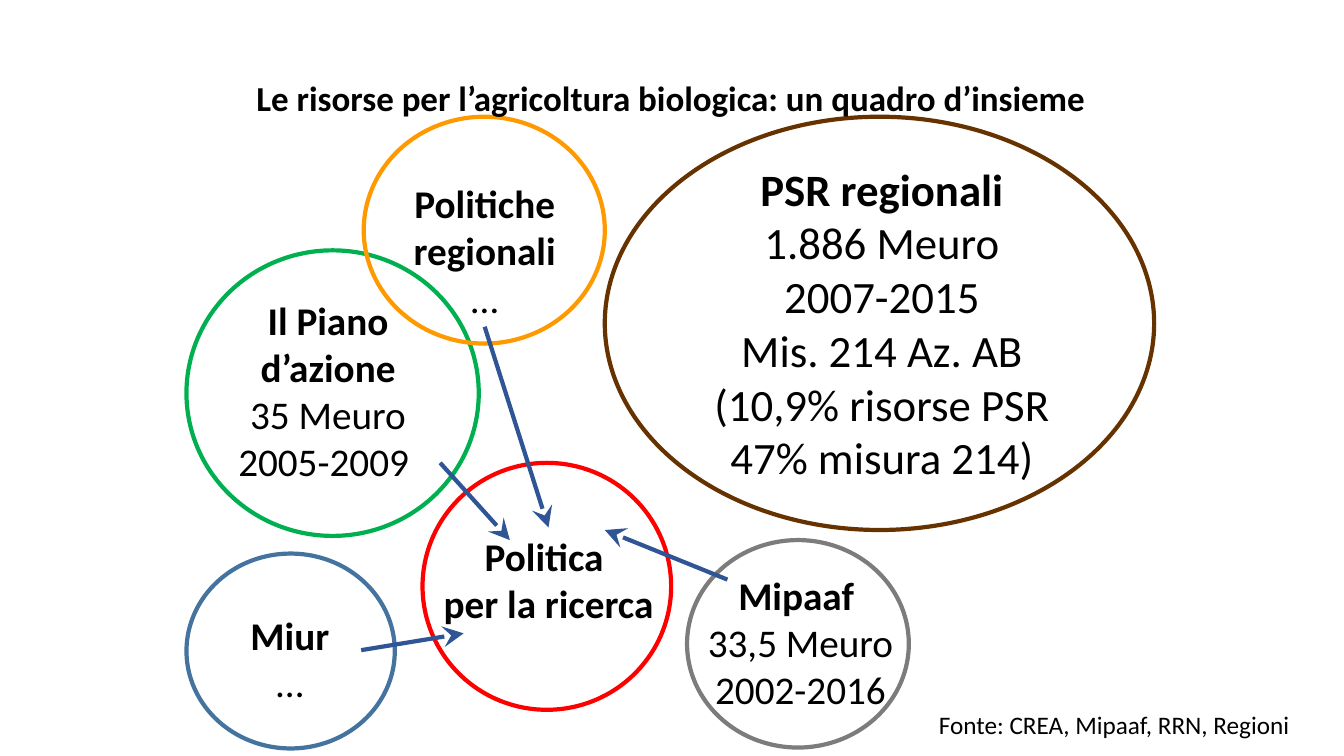
"""Build a slide on the funding of organic farming: circles, labels and arrows."""
from dataclasses import dataclass
from typing import Optional

from lxml import etree
from pptx import Presentation, util as u
from pptx.dml.color import RGBColor
from pptx.enum import shapes, text
from pptx.oxml.ns import qn

COLUMNS, ROWS = 160, 90


@dataclass(frozen=True)
class Theme:
    font: str = "Calibri"
    ink: str = "000000"
    arrow: str = "2F5597"
    green: str = "00B050"
    red: str = "FF0000"
    brown: str = "663300"
    orange: str = "FF9900"
    blue: str = "43739E"
    grey: str = "7C7C7C"
    title: int = 25
    large: int = 32
    body: int = 28
    source: int = 18
    stroke: int = 3


@dataclass(frozen=True)
class Box:
    column: float
    row: float
    width: float
    height: float


@dataclass(frozen=True)
class Circle:
    box: Box
    color: str


@dataclass(frozen=True)
class Label:
    name: str
    box: Box
    lines: tuple[str, ...]
    bold_lines: int = 1
    size: int = Theme.body
    centred: bool = True


@dataclass(frozen=True)
class Arrow:
    start: tuple[float, float]
    end: tuple[float, float]
    source: Optional[str] = None
    target: Optional[str] = None


THEME = Theme()

CIRCLES = (
    Circle(Box(22.2, 29.8, 34.8, 34), THEME.green),
    Circle(Box(50.3, 55.1, 29.6, 29.4), THEME.red),
    Circle(Box(72, 13.9, 65.4, 49.2), THEME.brown),
    Circle(Box(43.3, 13.9, 28.7, 27), THEME.orange),
    Circle(Box(22.2, 65.9, 24.8, 23.2), THEME.blue),
    Circle(Box(81.8, 64.3, 26.4, 24.7), THEME.grey),
)

LABELS = (
    Label("title", Box(27.7, 8.5, 104.3, 6.2),
          ("Le risorse per l’agricoltura biologica: un quadro d’insieme",), size=THEME.title),
    Label("plan", Box(24.7, 34.7, 28.7, 23.9),
          ("Il Piano d’azione", "35 Meuro", "2005-2009 ")),
    Label("rural", Box(81.5, 18.6, 47, 40),
          ("PSR regionali", "1.886 Meuro", "2007-2015", "Mis. 214 Az. AB",
           "(10,9% risorse PSR", "47% misura 214)"), size=THEME.large),
    Label("research", Box(48.2, 62.8, 34.2, 12.5),
          ("Politica ", "per la ricerca"), bold_lines=2),
    Label("regional", Box(41.2, 20.8, 33, 18.1), ("Politiche regionali", "…")),
    Label("university", Box(18, 72.2, 33, 12.5), ("Miur", "…")),
    Label("ministry", Box(80, 67.4, 30.6, 18.1),
          ("Mipaaf ", "33,5 Meuro", "2002-2016")),
    Label("source", Box(110.6, 83.9, 49.3, 4.8), ("Fonte: CREA, Mipaaf, RRN, Regioni",),
          bold_lines=0, size=THEME.source, centred=False),
)

ARROWS = (
    Arrow((57.7, 38.9), (65.3, 62.8), "regional", "research"),
    Arrow((52.4, 55.1), (60.7, 64.3)),
    Arrow((43, 77.4), (55.2, 75.4)),
    Arrow((86.6, 69), (72, 63.1)),
)


def to_length(cells: float) -> u.Length:
    """Turn grid cells into a slide length."""
    return u.Inches(cells * 7.5 / ROWS)


def place(box: Box) -> list[u.Length]:
    """Give left, top, width and height of a grid box."""
    return [to_length(cells) for cells in (box.column, box.row, box.width, box.height)]


def draw_circle(slide, circle: Circle) -> None:
    """Draw an unfilled ellipse."""
    shape = slide.shapes.add_shape(shapes.MSO_SHAPE.OVAL, *place(circle.box))
    shape.shadow.inherit = False
    shape.fill.background()
    shape.line.color.rgb = RGBColor.from_string(circle.color)
    shape.line.width = u.Pt(THEME.stroke)


def draw_label(slide, label: Label):
    """Draw a text box and return it."""
    shape = slide.shapes.add_textbox(*place(label.box))
    frame = shape.text_frame
    frame.word_wrap = True
    frame.auto_size = text.MSO_AUTO_SIZE.SHAPE_TO_FIT_TEXT
    frame.text = "\n".join(label.lines)
    for index, paragraph in enumerate(frame.paragraphs):
        paragraph.alignment = text.PP_ALIGN.CENTER if label.centred else text.PP_ALIGN.LEFT
        paragraph.font.name = THEME.font
        paragraph.font.size = u.Pt(label.size)
        paragraph.font.bold = index < label.bold_lines
        paragraph.font.color.rgb = RGBColor.from_string(THEME.ink)
    return shape


def draw_arrow(slide, arrow: Arrow, boxes: dict) -> None:
    """Draw a straight arrow, joined to label boxes where they are named."""
    ends = [to_length(cells) for cells in (*arrow.start, *arrow.end)]
    connector = slide.shapes.add_connector(shapes.MSO_CONNECTOR.STRAIGHT, *ends)
    if arrow.source:
        connector.begin_connect(boxes[arrow.source], 2)
    if arrow.target:
        connector.end_connect(boxes[arrow.target], 0)
    connector.line.color.rgb = RGBColor.from_string(THEME.arrow)
    connector.line.width = u.Pt(THEME.stroke)
    properties = connector._element.spPr
    etree.SubElement(properties.find(qn("a:ln")), qn("a:tailEnd"),
                     type="stealth", w="lg", len="lg")
    etree.SubElement(properties, qn("a:effectLst"))


def main() -> None:
    """Build and save the presentation."""
    presentation = Presentation()
    presentation.slide_width = to_length(COLUMNS)
    presentation.slide_height = to_length(ROWS)
    slide = presentation.slides.add_slide(presentation.slide_layouts[6])
    for circle in CIRCLES:
        draw_circle(slide, circle)
    boxes = {label.name: draw_label(slide, label) for label in LABELS}
    for arrow in ARROWS:
        draw_arrow(slide, arrow, boxes)
    presentation.save("out.pptx")


if __name__ == "__main__":
    main()
